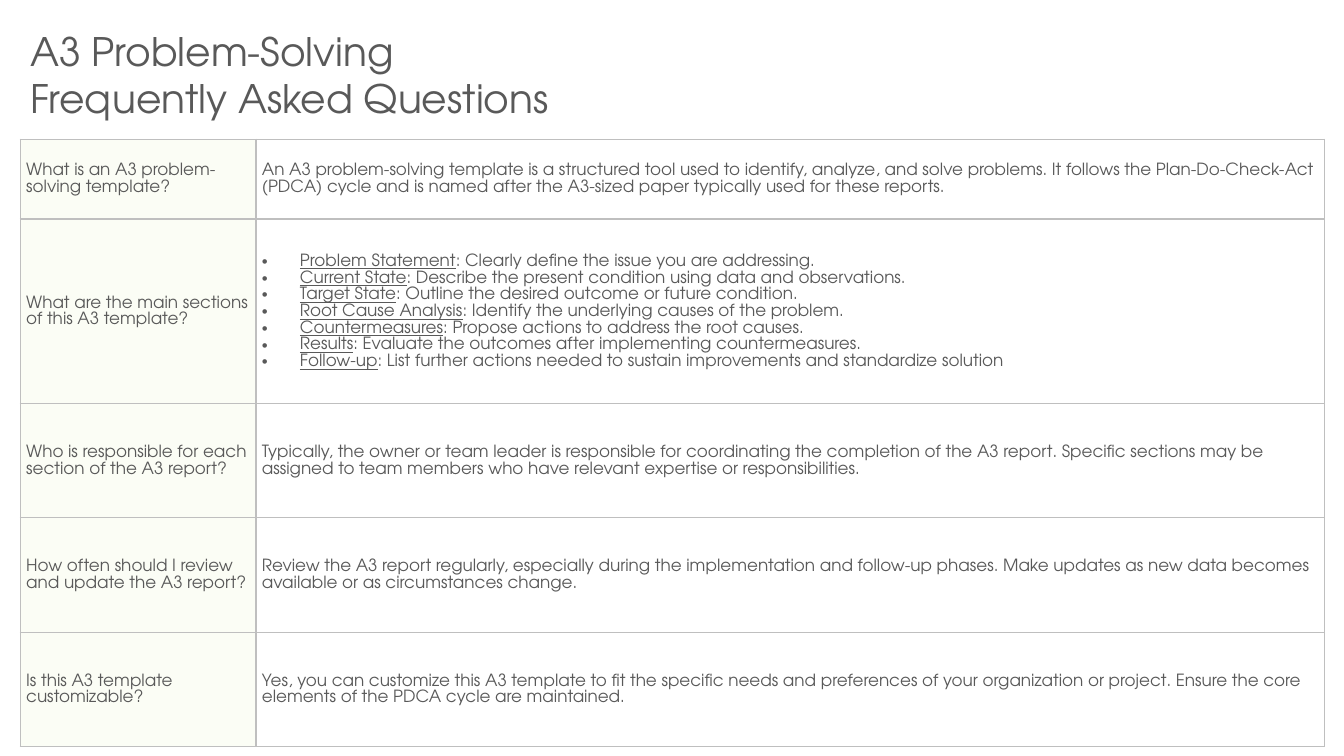
"""Build the A3 problem-solving FAQ slide."""
from lxml.etree import SubElement
from pptx import Presentation
from pptx.dml.color import RGBColor
from pptx.enum.text import MSO_ANCHOR as Anchor, PP_ALIGN as Align
from pptx.oxml.ns import qn
from pptx.util import Cm, Pt

TITLE = "A3 Problem-Solving \vFrequently Asked Questions"
PARTS = [
    ("Problem Statement", "Clearly define the issue you are addressing."),
    ("Current State", "Describe the present condition using data and observations."),
    ("Target State", "Outline the desired outcome or future condition."),
    ("Root Cause Analysis", "Identify the underlying causes of the problem."),
    ("Countermeasures", "Propose actions to address the root causes."),
    ("Results", "Evaluate the outcomes after implementing countermeasures."),
    ("Follow-up", "List further actions needed to sustain improvements and standardize solution"),
]
FAQ = [
    ("What is an A3 problem-solving template?",
     "An A3 problem-solving template is a structured tool used to identify, analyze, and solve "
     "problems. It follows the Plan-Do-Check-Act (PDCA) cycle and is named after the A3-sized "
     "paper typically used for these reports."),
    ("What are the main sections of this A3 template?", PARTS),
    ("Who is responsible for each section of the A3 report?",
     "Typically, the owner or team leader is responsible for coordinating the completion of the "
     "A3 report. Specific sections may be assigned to team members who have relevant expertise "
     "or responsibilities."),
    ("How often should I review and update the A3 report?",
     "Review the A3 report regularly, especially during the implementation and follow-up phases. "
     "Make updates as new data becomes available or as circumstances change."),
    ("Is this A3 template customizable?",
     "Yes, you can customize this A3 template to fit the specific needs and preferences of your "
     "organization or project. Ensure the core elements of the PDCA cycle are maintained."),
]
FACE = "TeX Gyre Adventor"
GRAY = RGBColor(0x59, 0x59, 0x59)
RULE = RGBColor(0xBF, 0xBF, 0xBF)
CREAM = RGBColor(0xFB, 0xFD, 0xF5)
WHITE = RGBColor(0xFF, 0xFF, 0xFF)
LEFT = Cm(0.51)
COLS = [Cm(5.94), Cm(26.92)]
ROWS = [Cm(2.01), Cm(4.65)] + [Cm(2.88)] * 3


def style(run, size):
    """Set the face, size and colour of a run."""
    run.font.name = FACE
    run.font.size = Pt(size)
    run.font.color.rgb = GRAY


def border(cell):
    """Draw a thin line on each side of a cell."""
    props = cell._tc.get_or_add_tcPr()
    for spot, side in enumerate(("lnL", "lnR", "lnT", "lnB")):
        line = SubElement(props, qn("a:" + side), w=str(Pt(1)))
        fill = SubElement(line, qn("a:solidFill"))
        SubElement(fill, qn("a:srgbClr"), val=str(RULE))
        props.insert(spot, line)


def bullet(para):
    """Give a paragraph a hanging bullet."""
    props = para._p.get_or_add_pPr()
    props.set("marL", str(Cm(0.96)))
    props.set("indent", str(-Cm(0.96)))
    SubElement(props, qn("a:buFont"), typeface="Arial")
    SubElement(props, qn("a:buChar"), char="•")


def write(cell, text):
    """Write plain text or a list of named parts in a cell."""
    frame = cell.text_frame
    if isinstance(text, str):
        frame.text = text
    else:
        frame.text = "\n".join(name for name, _ in text)
        for para, (_, note) in zip(frame.paragraphs, text):
            para.runs[0].font.underline = True
            para.add_run().text = ": " + note
            bullet(para)
    for para in frame.paragraphs:
        para.line_spacing = 1.07
        for run in para.runs:
            style(run, 12)


def main():
    """Make and save the slide."""
    deck = Presentation()
    deck.slide_width, deck.slide_height = Cm(33.87), Cm(19.05)
    slide = deck.slides.add_slide(deck.slide_layouts[5])

    title = slide.shapes.title
    title.left, title.top, title.width, title.height = LEFT, Cm(0.56), Cm(19.74), Cm(2.64)
    frame = title.text_frame
    frame.text = TITLE
    frame.vertical_anchor = Anchor.TOP
    para = frame.paragraphs[0]
    para.alignment = Align.LEFT
    for run in para.runs:
        style(run, 28)

    grid = slide.shapes.add_table(len(ROWS), len(COLS), LEFT, Cm(3.51), sum(COLS), sum(ROWS)).table
    for col, width in zip(grid.columns, COLS):
        col.width = width
    for row, height, pair in zip(grid.rows, ROWS, FAQ):
        row.height = height
        for cell, text, fill in zip(row.cells, pair, (CREAM, WHITE)):
            cell.margin_left = cell.margin_right = Cm(0.15)
            cell.margin_top = cell.margin_bottom = 0
            cell.vertical_anchor = Anchor.MIDDLE
            cell.fill.solid()
            cell.fill.fore_color.rgb = fill
            border(cell)
            write(cell, text)
    grid.first_row = grid.horz_banding = False
    deck.save("out.pptx")


if __name__ == "__main__":
    main()
